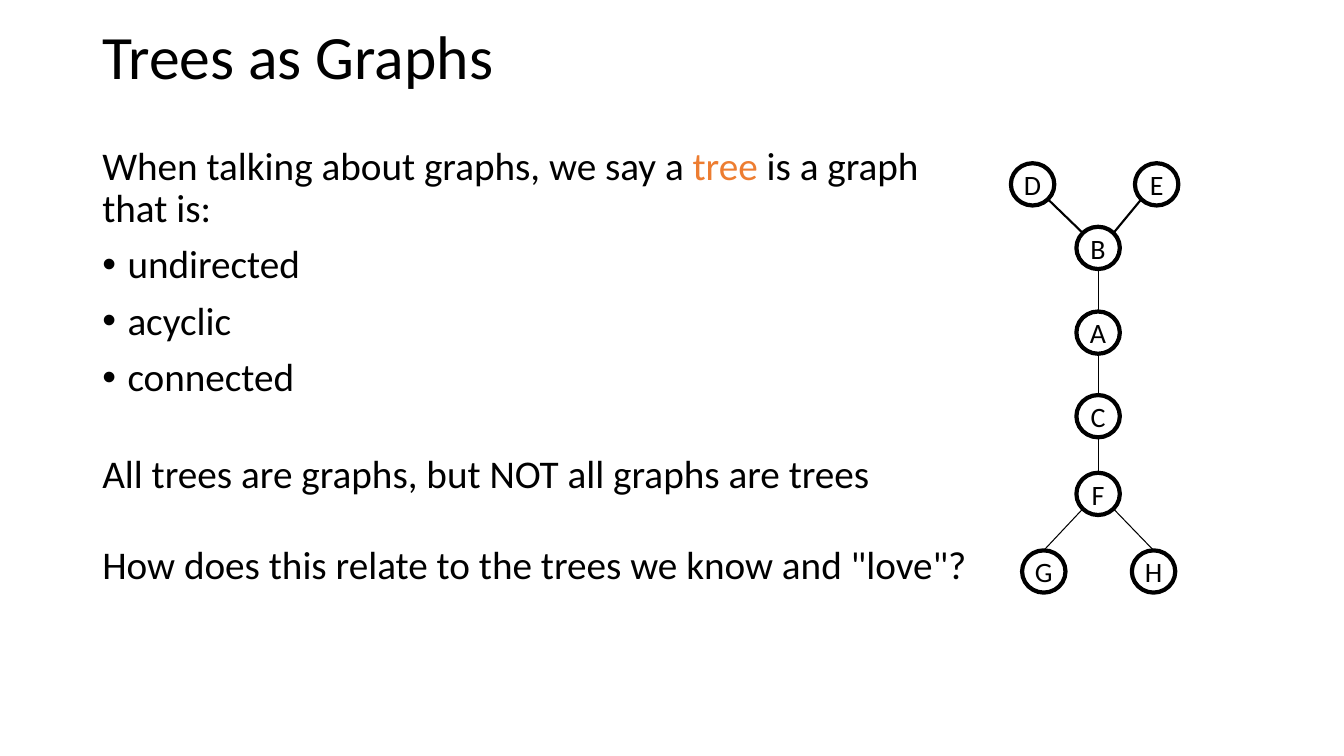
from dataclasses import dataclass

from lxml.etree import SubElement as Sub
from pptx import Presentation
from pptx.dml.color import RGBColor
from pptx.enum.shapes import MSO_CONNECTOR as Link, MSO_SHAPE as Kind
from pptx.enum.text import MSO_ANCHOR as Anchor, PP_ALIGN as Align
from pptx.oxml.ns import qn
from pptx.util import Pt

BLACK, ORANGE = "000000", "ED7D31"
WIDE, HIGH = 31, 30.2
TOP, TOP_LEFT, LOW_LEFT, BOTTOM, LOW_RIGHT, TOP_RIGHT = 0, 1, 3, 4, 5, 7


@dataclass
class Node:
    name: str
    mid: float
    top: float


@dataclass
class Edge:
    start: str
    site: int
    end: str
    goal: int
    width: float = 0.75


@dataclass
class Line:
    words: list[tuple[str, str]]
    before: float = 10
    bullet: bool = False


TRUNK = 784.4
NODES = [
    Node("D", 737.6, 116.6),
    Node("E", 826.2, 116.6),
    Node("B", TRUNK, 162),
    Node("A", TRUNK, 222.5),
    Node("C", TRUNK, 282.2),
    Node("F", TRUNK, 337.7),
    Node("G", 745.6, 393.1),
    Node("H", 824, 393.1),
]
EDGES = [
    Edge("B", TOP_LEFT, "D", LOW_RIGHT, 1.5),
    Edge("B", TOP_RIGHT, "E", LOW_LEFT, 1.5),
    Edge("B", BOTTOM, "A", TOP),
    Edge("A", BOTTOM, "C", TOP),
    Edge("C", BOTTOM, "F", TOP),
    Edge("F", LOW_LEFT, "G", TOP),
    Edge("F", LOW_RIGHT, "H", TOP),
]
TITLE = [Line([("Trees as Graphs", BLACK)], 0)]
BODY = [
    Line([
        ("When talking about graphs, we say a ", BLACK),
        ("tree", ORANGE),
        (" is a graph that is:", BLACK),
    ], 0),
    *[Line([(word, BLACK)], bullet=True)
      for word in ("undirected", "acyclic", "connected")],
    Line([("All trees are graphs, but NOT all graphs are trees", BLACK)], 39),
    Line([('How does this relate to the trees we know and "love"?', BLACK)], 34.5),
]


def paint(target, tone: str) -> None:
    target.rgb = RGBColor.from_string(tone)


def style(font, size: float, tone: str) -> None:
    font.name = "Calibri"
    font.size = Pt(size)
    paint(font.color, tone)


def add_text(slide, box: tuple, lines: list[Line], size: float, anchor) -> None:
    frame = slide.shapes.add_textbox(*map(Pt, box)).text_frame
    frame.word_wrap = True
    frame.vertical_anchor = anchor
    for rank, line in enumerate(lines):
        para = frame.add_paragraph() if rank else frame.paragraphs[0]
        para.line_spacing = 0.9
        para.space_before = Pt(line.before)
        if line.bullet:
            props = para._p.get_or_add_pPr()
            props.set("marL", str(Pt(18)))
            props.set("indent", str(Pt(-18)))
            Sub(props, qn("a:buFont"), typeface="Arial")
            Sub(props, qn("a:buChar"), char="•")
        for text, tone in line.words:
            run = para.add_run()
            run.text = text
            style(run.font, size, tone)


def add_node(slide, node: Node):
    ring = slide.shapes.add_shape(
        Kind.OVAL, Pt(node.mid - WIDE / 2), Pt(node.top), Pt(WIDE), Pt(HIGH))
    ring.shadow.inherit = False
    ring.fill.background()
    ring.line.width = Pt(3)
    paint(ring.line.color, BLACK)
    frame = ring.text_frame
    frame.word_wrap = False
    frame.vertical_anchor = Anchor.MIDDLE
    frame.text = node.name
    para = frame.paragraphs[0]
    para.alignment = Align.CENTER
    style(para.runs[0].font, 20, BLACK)
    return ring


def spot(ring, site: int) -> tuple[int, int]:
    slant = 0.5 ** 0.5
    across, down = {
        TOP: (0, -1),
        TOP_LEFT: (-slant, -slant),
        LOW_LEFT: (-slant, slant),
        BOTTOM: (0, 1),
        LOW_RIGHT: (slant, slant),
        TOP_RIGHT: (slant, -slant),
    }[site]
    return (int(ring.left + ring.width * (1 + across) / 2),
            int(ring.top + ring.height * (1 + down) / 2))


def add_edge(slide, edge: Edge, rings: dict) -> None:
    start = spot(rings[edge.start], edge.site)
    end = spot(rings[edge.end], edge.goal)
    link = slide.shapes.add_connector(Link.STRAIGHT, *start, *end)
    link.line.width = Pt(edge.width)
    paint(link.line.color, BLACK)
    Sub(link._element.spPr, qn("a:effectLst"))


def main() -> None:
    deck = Presentation()
    deck.slide_width, deck.slide_height = Pt(960), Pt(540)
    slide = deck.slides.add_slide(deck.slide_layouts[6])
    add_text(slide, (66, 15, 828, 55.5), TITLE, 44, Anchor.MIDDLE)
    add_text(slide, (66, 101, 641.5, 432), BODY, 28, Anchor.TOP)
    rings = {node.name: add_node(slide, node) for node in NODES}
    for edge in EDGES:
        add_edge(slide, edge, rings)
    deck.save("out.pptx")


if __name__ == "__main__":
    main()
